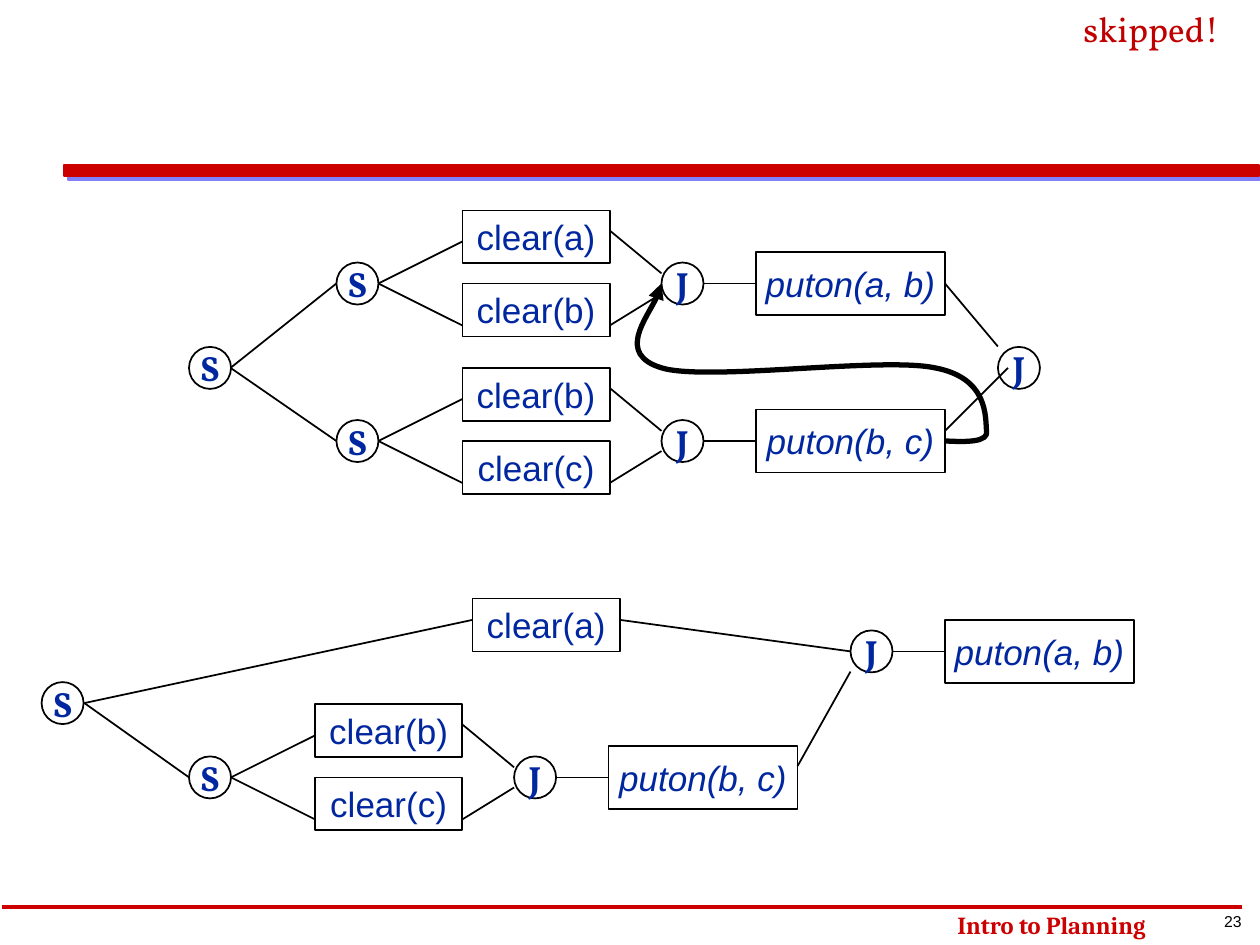
from lxml.etree import SubElement
from pptx import Presentation
from pptx.dml.color import RGBColor
from pptx.enum.shapes import MSO_CONNECTOR, MSO_SHAPE
from pptx.enum.text import MSO_ANCHOR, MSO_AUTO_SIZE, PP_ALIGN
from pptx.oxml.ns import qn
from pptx.util import Inches, Pt

BLACK = RGBColor(0x00, 0x00, 0x00)
BLUE = RGBColor(0x00, 0x27, 0x9F)
RED = RGBColor(0xCC, 0x00, 0x00)
DARK = RGBColor(0xC0, 0x00, 0x00)
SIDE = 1 / 3


class Plan:
    """Draws the parts of a plan network on one slide."""

    def __init__(self, slide):
        self.slide = slide
        self.shapes = slide.shapes

    def style(self, shape, text, size, face, color, bold=False, slant=False):
        para = shape.text_frame.paragraphs[0]
        para.text = text
        font = para.font
        font.size, font.name = Pt(size), face
        font.bold, font.italic = bold, slant
        font.color.rgb = color
        return para

    def label(self, spot, text, size, face, color, bold=False, wrap=False, align=PP_ALIGN.LEFT):
        box = self.shapes.add_textbox(*map(Inches, spot))
        box.text_frame.word_wrap = wrap
        box.text_frame.auto_size = MSO_AUTO_SIZE.SHAPE_TO_FIT_TEXT
        self.style(box, text, size, face, color, bold).alignment = align

    def bar(self, spot):
        shape = self.shapes.add_shape(MSO_SHAPE.RECTANGLE, *map(Inches, spot))
        shape.shadow.inherit = False
        shape.fill.solid()
        shape.fill.fore_color.rgb = RED
        shape.line.color.rgb = RED
        shape.line.width = Pt(1)
        effects = shape._element.spPr.find(qn("a:effectLst"))
        shade = SubElement(effects, qn("a:outerShdw"), dist=str(Pt(2.8)), dir="2700000", algn="ctr", rotWithShape="0")
        SubElement(shade, qn("a:srgbClr"), val="8080FF")

    def node(self, kind, spot, text, face, bold=False, slant=False):
        shape = self.shapes.add_shape(kind, *map(Inches, spot))
        shape.shadow.inherit = False
        shape.fill.background()
        shape.line.color.rgb = BLACK
        shape.line.width = Pt(1)
        shape.text_frame.word_wrap = False
        shape.text_frame.vertical_anchor = MSO_ANCHOR.MIDDLE
        self.style(shape, text, 20, face, BLUE, bold, slant).alignment = PP_ALIGN.CENTER
        return shape

    def ring(self, x, mid, text):
        return self.node(MSO_SHAPE.OVAL, (x, mid - SIDE / 2, SIDE, SIDE), text, "Vollkorn", bold=True)

    def test(self, x, y, text):
        return self.node(MSO_SHAPE.RECTANGLE, (x, y, 1.17, 0.42), text, "Arial")

    def act(self, x, mid, text):
        return self.node(MSO_SHAPE.RECTANGLE, (x, mid - 0.25, 1.5, 0.5), text, "Arial", slant=True)

    def wire(self, start, end, tail=None, head=None, color=BLACK, width=1):
        line = self.shapes.add_connector(MSO_CONNECTOR.STRAIGHT, *map(Inches, start + end))
        line.line.color.rgb = color
        line.line.width = Pt(width)
        SubElement(line._element.spPr, qn("a:effectLst"))
        if tail:
            line.begin_connect(tail, 3)
        if head:
            line.end_connect(head, 1)

    def branch(self, x, mid, first, second, goal):
        self.ring(x, mid, "S")
        self.test(x + 1, mid - 0.58, first)
        self.test(x + 1, mid, second)
        self.ring(x + 2.58, mid, "J")
        act = self.act(x + 3.33, mid, goal)
        for sign, out in ((-1, 0.42), (1, SIDE)):
            self.wire((x + SIDE, mid), (x + 1, mid + sign * SIDE))
            self.wire((x + 2.17, mid + sign * out), (x + 2.58, mid + sign * 0.08))
        self.wire((x + 2.92, mid), (x + 3.33, mid), head=act)
        return act

    def curve(self, start, points):
        pen = self.shapes.build_freeform(Inches(start[0]), Inches(start[1]))
        pen.add_line_segments([(Inches(x), Inches(y)) for x, y in points], close=False)
        shape = pen.convert_to_shape()
        steps = list(shape._element.iter(qn("a:lnTo")))
        for i in range(0, len(steps), 3):
            bend = SubElement(steps[i].getparent(), qn("a:cubicBezTo"))
            for step in steps[i:i + 3]:
                bend.append(step[0])
                step.getparent().remove(step)
        shape.shadow.inherit = False
        shape.fill.background()
        shape.line.color.rgb = BLACK
        shape.line.width = Pt(3)
        SubElement(shape._element.spPr.find(qn("a:ln")), qn("a:tailEnd"), type="triangle")


def main():
    deck = Presentation()
    deck.slide_width, deck.slide_height = Inches(10), Inches(7.5)
    plan = Plan(deck.slides.add_slide(deck.slide_layouts[6]))

    plan.bar((0.51, 1.31, 9.48, 0.09))
    plan.label((9.61, 7.19, 0.35, 0.25), "23", 9, "Arial", BLACK, align=PP_ALIGN.CENTER)
    plan.wire((9.86, 7.2), (0.02, 7.2), color=RED, width=2)
    plan.label((7.5, 7.17, 2.33, 0.33), "Intro to Planning", 14, "Cambria", RED, bold=True, wrap=True)

    plan.ring(1.5, 2.92, "S")
    plan.ring(7.92, 2.92, "J")
    upper = plan.branch(2.67, 2.25, "clear(a)", "clear(b)", "puton(a, b)")
    plan.branch(2.67, 3.5, "clear(b)", "clear(c)", "puton(b, c)")
    for mid in (2.25, 3.5):
        plan.wire((1.83, 2.92), (2.67, mid))
    plan.wire((7.5, 2.25), (7.92, 2.75), tail=upper)
    plan.wire((7.5, 3.42), (8, 2.92))
    plan.curve((7.5, 3.5), [
        (7.67, 3.51), (7.85, 3.51), (7.83, 3.42),
        (7.82, 3.32), (7.85, 3), (7.42, 2.92),
        (6.99, 2.83), (5.61, 3.03), (5.25, 2.92),
        (4.89, 2.81), (5.25, 2.36), (5.25, 2.25),
    ])

    plan.ring(0.33, 5.58, "S")
    plan.test(3.75, 4.75, "clear(a)")
    plan.ring(6.75, 5.17, "J")
    last = plan.act(7.5, 5.17, "puton(a, b)")
    plan.branch(1.5, 6.17, "clear(b)", "clear(c)", "puton(b, c)")
    plan.wire((0.67, 5.58), (3.75, 4.92))
    plan.wire((0.67, 5.58), (1.5, 6.17))
    plan.wire((4.92, 4.92), (6.75, 5.17))
    plan.wire((7.08, 5.17), (7.5, 5.17), head=last)
    plan.wire((6.33, 6.08), (6.75, 5.33))

    plan.label((8.5, 0.01, 1.28, 0.44), "skipped!", 20, "Vollkorn", DARK)
    deck.save("out.pptx")


if __name__ == "__main__":
    main()
